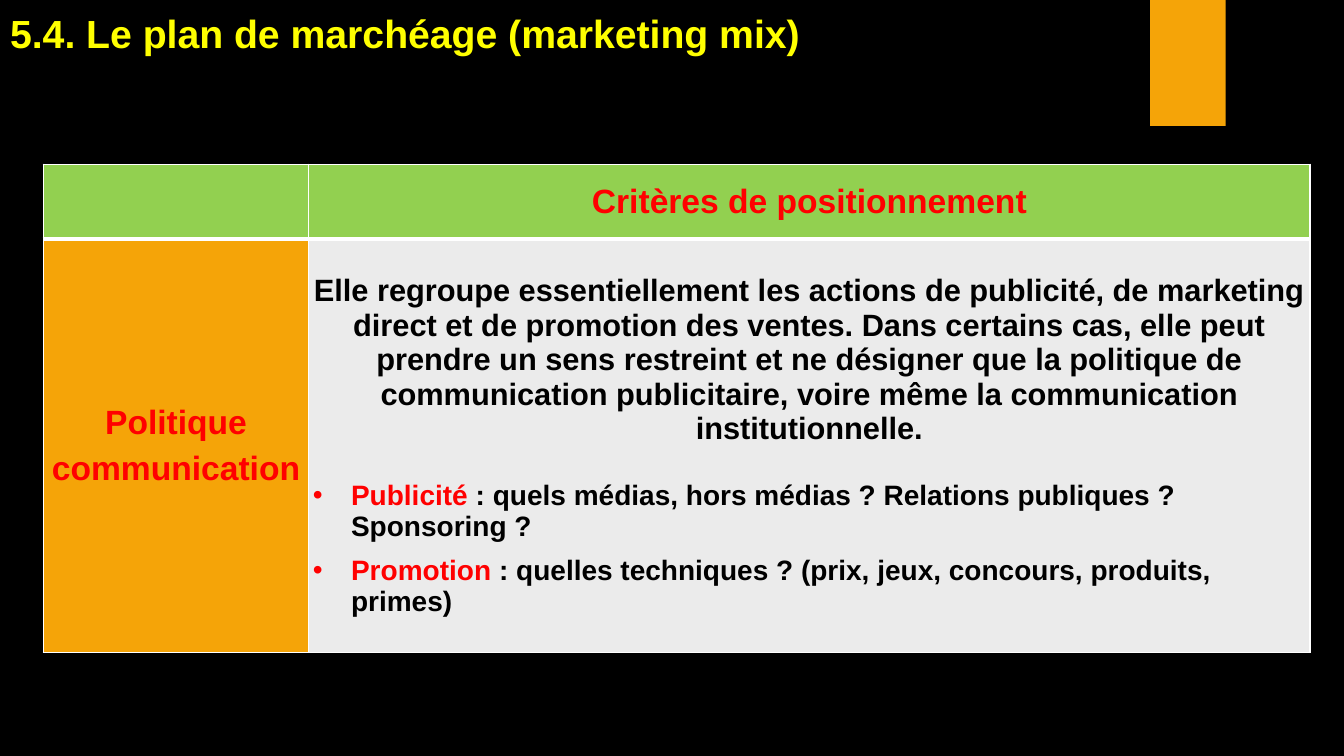
"""Build the marketing mix slide about communication policy."""
from dataclasses import dataclass

from lxml.etree import SubElement
from pptx import Presentation
from pptx.dml.color import RGBColor
from pptx.enum.shapes import MSO_SHAPE
from pptx.enum.text import MSO_ANCHOR, MSO_AUTO_SIZE, PP_ALIGN
from pptx.oxml.ns import qn
from pptx.util import Inches, Pt


@dataclass(frozen=True)
class Theme:
    """Hold the colours, font and type sizes."""
    background: str = "000000"
    title: str = "FFFF00"
    accent: str = "F5A408"
    header: str = "92D050"
    panel: str = "EBEBEB"
    highlight: str = "FF0000"
    body: str = "000000"
    border: str = "FFFFFF"
    font: str = "Arial"
    title_size: int = 28
    heading_size: int = 24
    body_size: int = 22
    bullet_size: int = 20


THEME = Theme()
GRID_COLUMNS, GRID_ROWS = 160, 90
WIDTH, HEIGHT = Inches(13.333), Inches(7.5)
COLUMN_WIDTHS = (31.6, 119.2)
ROW_HEIGHTS = (8.88, 49.2)
INTRODUCTION = (
    "Elle regroupe essentiellement les actions de publicité, de marketing direct et de "
    "promotion des ventes. Dans certains cas, elle peut prendre un sens restreint et ne "
    "désigner que la politique de communication publicitaire, voire même la communication "
    "institutionnelle."
)
QUESTIONS = (
    ("Publicité", " : quels médias, hors médias ? Relations publiques ? Sponsoring ?"),
    ("Promotion", " : quelles techniques ? (prix, jeux, concours, produits, primes)"),
)


def columns(count):
    """Return the width of a number of grid columns."""
    return round(WIDTH * count / GRID_COLUMNS)


def rows(count):
    """Return the height of a number of grid rows."""
    return round(HEIGHT * count / GRID_ROWS)


def paint(fill, color):
    """Make a fill solid in one colour."""
    fill.solid()
    fill.fore_color.rgb = RGBColor.from_string(color)


def style(paragraph, size, color=None, align=PP_ALIGN.CENTER, before=0, after=0):
    """Set the font, alignment and spacing of a paragraph."""
    paragraph.alignment = align
    paragraph.space_before, paragraph.space_after = Pt(before), Pt(after)
    font = paragraph.font
    font.name, font.size, font.bold = THEME.font, Pt(size), True
    if color:
        font.color.rgb = RGBColor.from_string(color)


def add_bullet(paragraph, indent):
    """Give a paragraph a hanging round bullet."""
    properties = paragraph._p.get_or_add_pPr()
    properties.set("marL", str(indent))
    properties.set("indent", str(-indent))
    SubElement(properties, qn("a:buFont"), typeface=THEME.font)
    SubElement(properties, qn("a:buChar"), char="•")


def add_borders(cell, bottom):
    """Draw the four borders of a cell, with its own bottom width."""
    properties = cell._tc.get_or_add_tcPr()
    for side, width in (("L", 1), ("R", 1), ("T", 1), ("B", bottom)):
        line = SubElement(properties, qn(f"a:ln{side}"), w=str(Pt(width)))
        fill = SubElement(line, qn("a:solidFill"))
        SubElement(fill, qn("a:srgbClr"), val=THEME.border)


def format_cell(cell, color, bottom):
    """Set the borders, fill, insets and anchor of a cell."""
    add_borders(cell, bottom)
    paint(cell.fill, color)
    cell.margin_left = cell.margin_right = columns(0.48)
    cell.margin_top = cell.margin_bottom = 0
    cell.vertical_anchor = MSO_ANCHOR.MIDDLE


def set_title(slide, text):
    """Place and format the title placeholder."""
    title = slide.shapes.title
    title.left, title.top = 0, 0
    title.width, title.height = columns(152.16), rows(6.84)
    frame = title.text_frame
    frame.text = text
    frame.word_wrap = True
    frame.auto_size = MSO_AUTO_SIZE.NONE
    frame.vertical_anchor = MSO_ANCHOR.TOP
    frame.margin_top = rows(1.1)
    style(frame.paragraphs[0], THEME.title_size, THEME.title, PP_ALIGN.LEFT, after=3)


def add_ribbon(slide):
    """Add the plain ribbon at the top edge."""
    ribbon = slide.shapes.add_shape(
        MSO_SHAPE.RECTANGLE, columns(136.92), 0, columns(9), rows(15))
    ribbon.shadow.inherit = False
    paint(ribbon.fill, THEME.accent)
    ribbon.line.fill.background()


def fill_policy(frame):
    """Write the policy name on two lines."""
    frame.text = "Politique\ncommunication"
    for index, paragraph in enumerate(frame.paragraphs):
        style(paragraph, THEME.heading_size, THEME.highlight, before=3 * index, after=3)


def fill_criteria(frame):
    """Write the introduction and the bulleted questions."""
    frame.text = INTRODUCTION
    style(frame.paragraphs[0], THEME.body_size, THEME.body, after=18)
    for topic, question in QUESTIONS:
        paragraph = frame.add_paragraph()
        add_bullet(paragraph, columns(4.56))
        style(paragraph, THEME.bullet_size, align=PP_ALIGN.LEFT, before=6, after=3)
        for text, color in ((topic, THEME.highlight), (question, THEME.body)):
            run = paragraph.add_run()
            run.text = text
            run.font.color.rgb = RGBColor.from_string(color)


def add_criteria_table(slide):
    """Add the positioning criteria table."""
    table = slide.shapes.add_table(
        2, 2, columns(5.16), rows(19.56),
        columns(sum(COLUMN_WIDTHS)), rows(sum(ROW_HEIGHTS))).table
    for column, width in zip(table.columns, COLUMN_WIDTHS):
        column.width = columns(width)
    for row, height in zip(table.rows, ROW_HEIGHTS):
        row.height = rows(height)
    fills = ((THEME.header, THEME.header), (THEME.accent, THEME.panel))
    for row, colors, bottom in zip(table.rows, fills, (3, 1)):
        for cell, color in zip(row.cells, colors):
            format_cell(cell, color, bottom)
    heading = table.cell(0, 1).text_frame
    heading.text = "Critères de positionnement"
    style(heading.paragraphs[0], THEME.heading_size, THEME.highlight)
    fill_policy(table.cell(1, 0).text_frame)
    fill_criteria(table.cell(1, 1).text_frame)


def main():
    """Build and save the presentation."""
    presentation = Presentation()
    presentation.slide_width, presentation.slide_height = WIDTH, HEIGHT
    slide = presentation.slides.add_slide(presentation.slide_layouts[5])
    paint(slide.background.fill, THEME.background)
    add_ribbon(slide)
    add_criteria_table(slide)
    set_title(slide, "5.4. Le plan de marchéage (marketing mix)")
    presentation.save("out.pptx")


if __name__ == "__main__":
    main()
